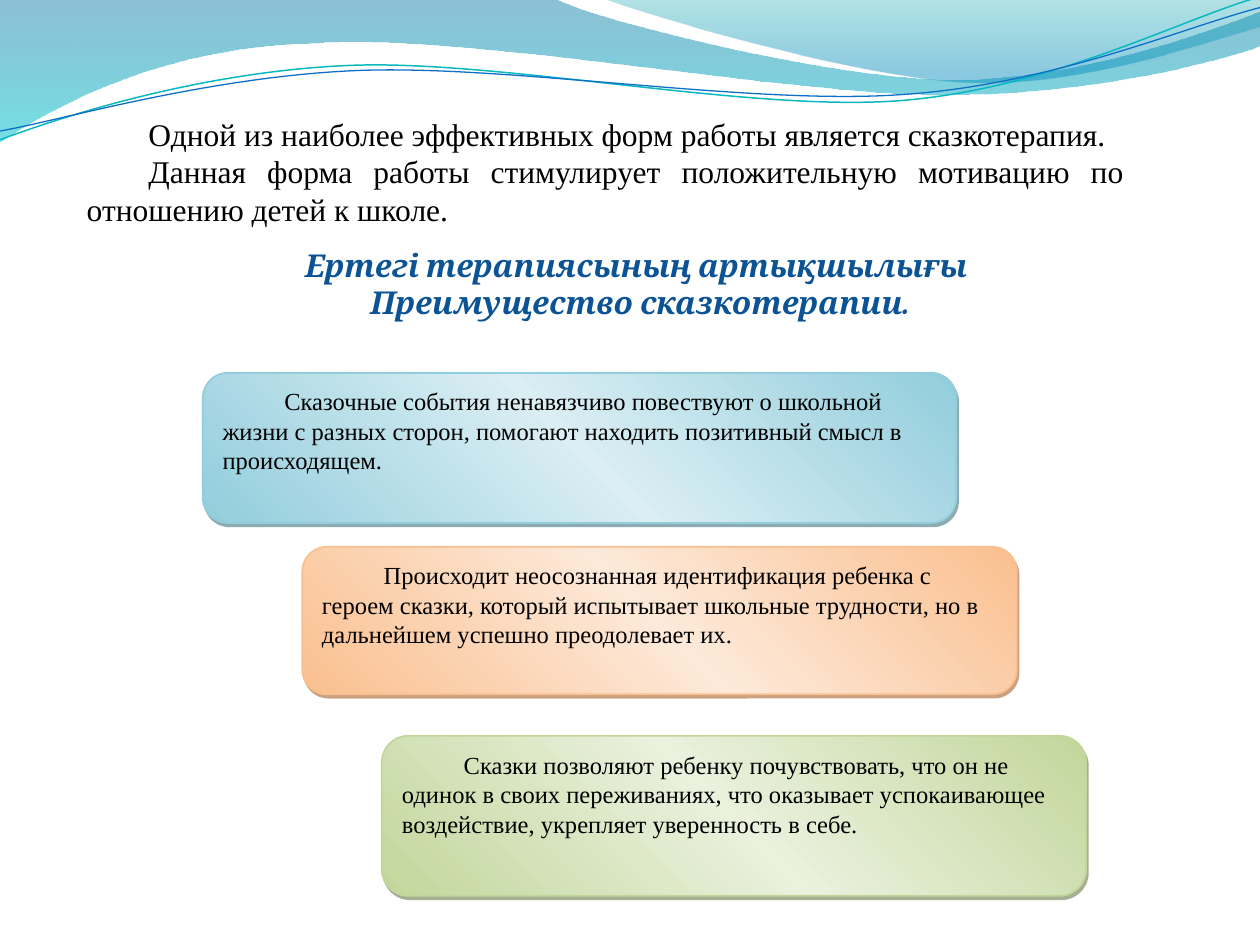
from math import cos, radians, sin

from lxml.etree import SubElement
from pptx import Presentation
from pptx.dml.color import RGBColor
from pptx.enum.shapes import MSO_SHAPE
from pptx.enum.text import MSO_ANCHOR, PP_ALIGN
from pptx.oxml.ns import qn
from pptx.util import Inches, Pt

COLUMNS, ROWS = 10, 7.5
CELL = Inches(1)
TILT = 357.3

WAVES = [
    ((-0.01, -0.01, 10.02, 1.14),
     [(0, 0), (4.4, -0.01), (4.76, 0.17, 6.64, 0.63, 7.58, 0.63),
      (8.53, 0.63, 9.58, 0.26, 10, 0.09), (10.01, 0.36),
      (9.83, 0.44, 8.7, 0.76, 7.46, 0.75), (6.22, 0.75, 3.82, 0.28, 2.57, 0.34),
      (1.29, 0.36, 0.46, 0.83, -0.01, 1.13), (0, 0)],
     [(0, "0074A1", 45), (100, "00C6CF", 55)]),
    ((4.79, -0.01, 5.21, 0.7),
     [(4.79, -0.01), (5.09, 0.11, 6.82, 0.62, 7.69, 0.65),
      (8.56, 0.69, 9.61, 0.32, 10, 0.21), (10, 0), (4.79, -0.01)],
     [(0, "00A1A9", 30), (80, "008BBF", 45)]),
]
STRANDS = [
    ((-0.02, 0.22, 10.02, 0.71),
     [(0, 1.11), (0.48, 0.93, 1.58, 0.57, 2.77, 0.52),
      (3.95, 0.47, 5.93, 0.89, 7.13, 0.8), (8.33, 0.71, 9.38, 0.15, 9.98, -0.02)],
     "0AB8BF", 0.85),
    ((-0.02, 0.3, 10.03, 0.58),
     [(0, 1.04), (0.47, 0.96, 1.64, 0.61, 2.83, 0.56),
      (4.03, 0.51, 5.97, 0.84, 7.17, 0.75), (8.36, 0.67, 9.41, 0.21, 10, 0.06)],
     "0F6FC6", 0.75),
]
BENEFITS = [
    ((1.61, 2.96, 5.98, 1.19), "92CDDC", "DAEEF3", "205867",
     "Сказочные события ненавязчиво повествуют о школьной жизни с разных сторон, "
     "помогают находить позитивный смысл в происходящем."),
    ((2.4, 4.34, 5.67, 1.17), "FABF8F", "FDE9D9", "974706",
     "Происходит неосознанная идентификация ребенка с героем сказки, который "
     "испытывает школьные трудности, но в дальнейшем успешно преодолевает их."),
    ((3.03, 5.84, 5.59, 1.27), "C2D69B", "EAF1DD", "4E6128",
     "Сказки позволяют ребенку почувствовать, что он не одинок в своих переживаниях, "
     "что оказывает успокаивающее воздействие, укрепляет уверенность в себе."),
]
INTRODUCTION = [
    "Одной из наиболее эффективных форм работы является сказкотерапия. ",
    "Данная форма работы стимулирует положительную мотивацию по отношению детей к школе.",
]
HEADING = [" Ертегі терапиясының артықшылығы ", " Преимущество сказкотерапии."]


def color(value):
    return RGBColor.from_string(value)


def grid(*lengths):
    return [round(length * CELL) for length in lengths]


def add_color(parent, value, opacity):
    element = SubElement(parent, qn("a:srgbClr"), val=value)
    if opacity < 100:
        SubElement(element, qn("a:alpha"), val=str(opacity * 1000))


def fill_gradient(shape, stops, angle):
    shape.fill.background()
    properties = shape._element.spPr
    blank = properties.find(qn("a:noFill"))
    gradient = SubElement(properties, qn("a:gradFill"), rotWithShape="1")
    stop_list = SubElement(gradient, qn("a:gsLst"))
    for position, value, opacity in stops:
        stop = SubElement(stop_list, qn("a:gs"), pos=str(position * 1000))
        add_color(stop, value, opacity)
    SubElement(gradient, qn("a:lin"), ang=str(angle * 60000), scaled="0")
    properties.replace(blank, gradient)


def cast_shadow(shape, value):
    effects = shape._element.spPr.find(qn("a:effectLst"))
    shadow = SubElement(effects, qn("a:outerShdw"), blurRad="0", dist=str(Pt(2.2)),
                        dir=str(63 * 60000), algn="ctr", rotWithShape="0")
    add_color(shadow, value, 50)


def write(paragraph, text, size=18, font="Times New Roman", ink="000000", bold=False,
          italic=False, align=PP_ALIGN.LEFT, before=0):
    paragraph.alignment = align
    paragraph.space_before = Pt(before)
    paragraph._p.get_or_add_pPr().set("indent", str(grid(0.49)[0]))
    run = paragraph.add_run()
    run.text = text
    run.font.size, run.font.name = Pt(size), font
    run.font.bold, run.font.italic = bold, italic
    run.font.color.rgb = color(ink)


def local_point(x, y, place, rotation):
    left, top, width, height = place
    across, down = x - left - width / 2, y - top - height / 2
    turn = radians(-rotation)
    return grid(across * cos(turn) - down * sin(turn) + width / 2,
                across * sin(turn) + down * cos(turn) + height / 2)


def curve_path(shape, place, outline, rotation):
    curve = next(shape._element.iter(qn("a:path")))
    for child in list(curve):
        curve.remove(child)
    curve.set("w", str(shape.width))
    curve.set("h", str(shape.height))
    for index, segment in enumerate(outline):
        tag = "a:cubicBezTo" if len(segment) == 6 else "a:lnTo" if index else "a:moveTo"
        command = SubElement(curve, qn(tag))
        for x, y in zip(segment[::2], segment[1::2]):
            across, down = local_point(x, y, place, rotation)
            SubElement(command, qn("a:pt"), x=str(across), y=str(down))
    if outline[0] == outline[-1]:
        SubElement(curve, qn("a:close"))


class SlideBuilder:
    def __init__(self, presentation):
        self.slide = presentation.slides.add_slide(presentation.slide_layouts[6])
        self.shapes = self.slide.shapes

    def outline(self, place, outline, rotation=0):
        start, *points = [grid(*segment[-2:]) for segment in outline]
        builder = self.shapes.build_freeform(*start)
        builder.add_line_segments(points, close=False)
        shape = builder.convert_to_shape()
        shape.left, shape.top, shape.width, shape.height = grid(*place)
        shape.rotation = rotation
        shape.shadow.inherit = False
        curve_path(shape, place, outline, rotation)
        return shape

    def wave(self, place, outline, stops):
        shape = self.outline(place, outline)
        fill_gradient(shape, stops, 90)
        shape.line.fill.background()

    def strand(self, place, outline, value, width):
        shape = self.outline(place, outline, TILT)
        shape.fill.background()
        shape.line.color.rgb = color(value)
        shape.line.width = Pt(width)

    def card(self, place, edge, middle, shade, text):
        shape = self.shapes.add_shape(MSO_SHAPE.ROUNDED_RECTANGLE, *grid(*place))
        shape.shadow.inherit = False
        fill_gradient(shape, [(0, edge, 100), (50, middle, 100), (100, edge, 100)], 315)
        shape.line.color.rgb = color(edge)
        shape.line.width = Pt(1)
        cast_shadow(shape, shade)
        frame = shape.text_frame
        frame.word_wrap = True
        frame.vertical_anchor = MSO_ANCHOR.TOP
        write(frame.paragraphs[0], text, size=14)

    def opening(self, place, introduction, heading):
        frame = self.shapes.add_textbox(*grid(*place)).text_frame
        frame.word_wrap = True
        frame.margin_top = Inches(0.06)
        lines = [(text, dict(align=PP_ALIGN.JUSTIFY)) for text in introduction]
        lines += [(text, dict(font="Cambria", ink="0B5394", bold=True, italic=True,
                              align=PP_ALIGN.CENTER, before=0 if index else 10))
                  for index, text in enumerate(heading)]
        for index, (text, style) in enumerate(lines):
            paragraph = frame.add_paragraph() if index else frame.paragraphs[0]
            write(paragraph, text, **style)


def main():
    presentation = Presentation()
    presentation.slide_width, presentation.slide_height = grid(COLUMNS, ROWS)
    builder = SlideBuilder(presentation)
    for wave in WAVES:
        builder.wave(*wave)
    for strand in STRANDS:
        builder.strand(*strand)
    for benefit in BENEFITS:
        builder.card(*benefit)
    builder.opening((0.59, 0.85, 8.43, 2.05), INTRODUCTION, HEADING)
    presentation.save("out.pptx")


if __name__ == "__main__":
    main()
